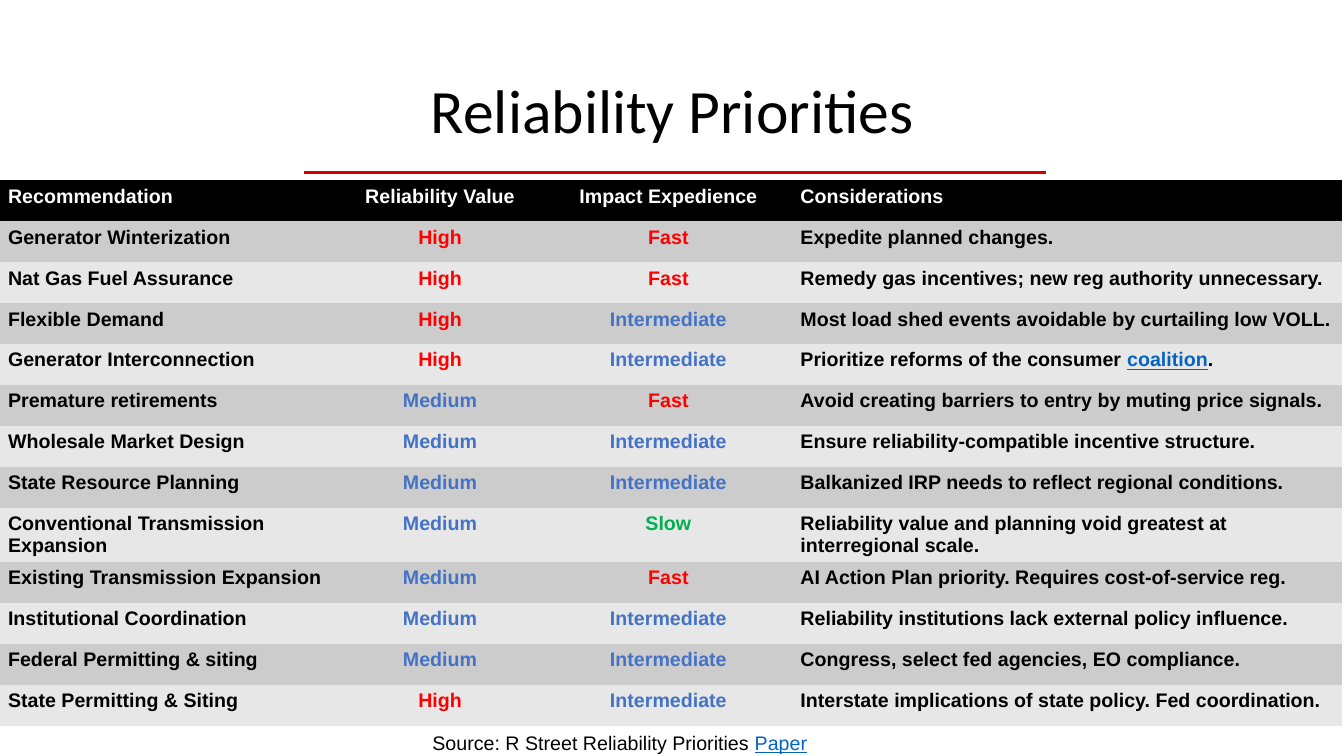
from lxml import etree
from pptx import Presentation
from pptx import util as u
from pptx.dml.color import RGBColor
from pptx.enum import shapes, text
from pptx.oxml.ns import qn

# Content
TITLE = "Reliability Priorities"
HEADER = ("Recommendation", "Reliability Value", "Impact Expedience", "Considerations")
ROWS = [
    ("Generator Winterization", "High", "Fast", "Expedite planned changes."),
    ("Nat Gas Fuel Assurance", "High", "Fast",
     "Remedy gas incentives; new reg authority unnecessary."),
    ("Flexible Demand", "High", "Intermediate",
     "Most load shed events avoidable by curtailing low VOLL."),
    ("Generator Interconnection", "High", "Intermediate",
     ("Prioritize reforms of the consumer ", "coalition", ".")),
    ("Premature retirements", "Medium", "Fast",
     "Avoid creating barriers to entry by muting price signals."),
    ("Wholesale Market Design", "Medium", "Intermediate",
     "Ensure reliability-compatible incentive structure."),
    ("State Resource Planning", "Medium", "Intermediate",
     "Balkanized IRP needs to reflect regional conditions."),
    ("Conventional Transmission Expansion", "Medium", "Slow",
     "Reliability value and planning void greatest at interregional scale."),
    ("Existing Transmission Expansion", "Medium", "Fast",
     "AI Action Plan priority. Requires cost-of-service reg."),
    ("Institutional Coordination", "Medium", "Intermediate",
     "Reliability institutions lack external policy influence."),
    ("Federal Permitting & siting", "Medium", "Intermediate",
     "Congress, select fed agencies, EO compliance."),
    ("State Permitting & Siting", "High", "Intermediate",
     "Interstate implications of state policy. Fed coordination."),
]
SOURCE = ("Source: R Street Reliability Priorities ", "Paper")
LINKED = ("coalition", "Paper")

# Theme
THEME = dict(
    title_font="Calibri", body_font="Arial", title_size=44, body_size=14,
    ink="000000", white="FFFFFF", rule="D70000", link="0563C1",
    bands=("CCCCCC", "E7E7E7"),
    ratings={"High": "FF0000", "Fast": "FF0000", "Medium": "4472C4",
             "Intermediate": "4472C4", "Slow": "00B050"},
)
COLUMNS = (3.33, 2.11, 2.42, 5.47)
TABLE_HEIGHT = 5.28
PLAIN_TABLE = "{2D5ABB26-0587-4C30-8999-92F81FD0307C}"  # no style, no grid


def rgb(name):
    return RGBColor.from_string(name)


def add_run(p, words, color, font=THEME["body_font"], size=THEME["body_size"], bold=False):
    r = p.add_run()
    r.text = words
    r.font.name, r.font.size, r.font.bold = font, u.Pt(size), bold
    r.font.color.rgb = rgb(color)
    if words in LINKED:
        r.font.underline = True
        r.font.color.rgb = rgb(THEME["link"])


prs = Presentation()
prs.slide_width, prs.slide_height = u.Inches(13.33), u.Inches(7.5)
s = prs.slides.add_slide(prs.slide_layouts[5])

# Title
sp = s.shapes.title
sp.left, sp.top, sp.width, sp.height = map(u.Inches, (0.92, 0.4, 11.5, 1.45))
tf = sp.text_frame
tf.vertical_anchor = text.MSO_ANCHOR.MIDDLE
p = tf.paragraphs[0]
p.alignment = text.PP_ALIGN.CENTER
p.line_spacing = 0.9
add_run(p, TITLE, THEME["ink"], THEME["title_font"], THEME["title_size"])

# Rule under the title
rule = s.shapes.add_connector(shapes.MSO_CONNECTOR.STRAIGHT, u.Inches(3.02), u.Inches(1.71),
                              u.Inches(10.37), u.Inches(1.71))
rule.line.color.rgb = rgb(THEME["rule"])
rule.line.width = u.Pt(2)
etree.SubElement(rule._element.spPr, qn("a:effectLst"))

# Priorities table
grid = [HEADER] + ROWS
frame = s.shapes.add_table(len(grid), len(COLUMNS), u.Inches(-0.02), u.Inches(1.79),
                           u.Inches(sum(COLUMNS)), u.Inches(TABLE_HEIGHT))
table = frame.table
table._tbl.tblPr.find(qn("a:tableStyleId")).text = PLAIN_TABLE
for column, width in zip(table.columns, COLUMNS):
    column.width = u.Inches(width)
for i, row in enumerate(grid):
    fill = THEME["bands"][(i - 1) % 2] if i else THEME["ink"]
    base = THEME["ink"] if i else THEME["white"]
    for j, content in enumerate(row):
        cell = table.cell(i, j)
        cell.fill.solid()
        cell.fill.fore_color.rgb = rgb(fill)
        p = cell.text_frame.paragraphs[0]
        if j in (1, 2):
            p.alignment = text.PP_ALIGN.CENTER
        for words in (content,) if isinstance(content, str) else content:
            add_run(p, words, THEME["ratings"].get(words, base), bold=True)

# Source line
sp = s.shapes.add_textbox(*map(u.Inches, (4.19, 7.2, 5.58, 0.34)))
tf = sp.text_frame
tf.word_wrap = True
tf.auto_size = text.MSO_AUTO_SIZE.SHAPE_TO_FIT_TEXT
for words in SOURCE:
    add_run(tf.paragraphs[0], words, THEME["ink"])

prs.save("out.pptx")
